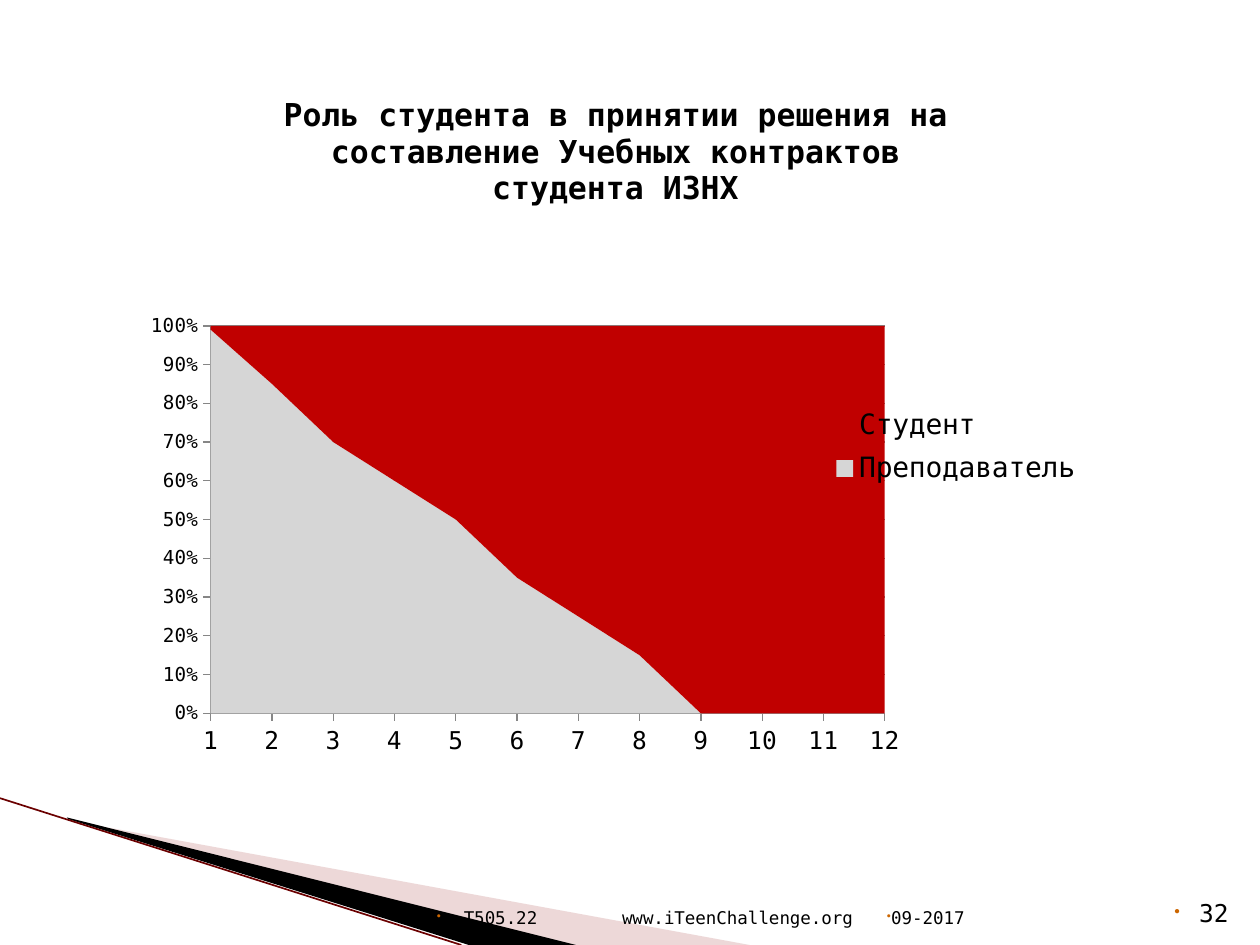
from lxml import etree
from pptx import Presentation
from pptx.chart.data import CategoryChartData
from pptx.dml.color import RGBColor
from pptx.enum.chart import XL_CHART_TYPE as ChartType, XL_LEGEND_POSITION as LegendPosition
from pptx.enum.chart import XL_TICK_MARK as TickMark
from pptx.enum.shapes import MSO_CONNECTOR as Connector
from pptx.enum.text import MSO_ANCHOR as Anchor, PP_ALIGN as Align
from pptx.oxml import parse_xml
from pptx.oxml.ns import nsdecls, qn
from pptx.util import Cm, Pt

FONT = "DejaVu Sans Mono"
BLACK = RGBColor(0x00, 0x00, 0x00)
PINK = RGBColor(0xD2, 0x9E, 0x9E)
DARK_RED = RGBColor(0x6B, 0x00, 0x00)
RED = RGBColor(0xC0, 0x00, 0x00)
SILVER = RGBColor(0xD6, 0xD6, 0xD6)
AXIS_GRAY = RGBColor(0x86, 0x86, 0x86)
ORANGE = RGBColor(0xCC, 0x66, 0x00)

# Content: lengths in centimetres
TITLE = ["Роль студента в принятии решения на составление Учебных контрактов",
         "студента ИЗНХ"]
MONTHS = [str(month) for month in range(1, 13)]
TEACHER = [99, 85, 70, 60, 50, 35, 25, 15, 0, 0, 0, 0]
SERIES = [("Преподаватель", TEACHER, SILVER),
          ("Студент", [100 - share for share in TEACHER], RED)]
CHART_AREA = (2.74, 1.27, 19.33, 15.32)
PLOT_LAYOUT = dict(x=0.078, y=0.346, w=0.703, h=0.51)
LEGEND_LAYOUT = dict(x=0.72, y=0.44, w=0.27, h=0.13)
TITLE_LAYOUT = dict(x=0.15, y=0.037)

WEDGES = [([(1.4, 16.54), (15.11, 19.05), (11.58, 19.05), (1.4, 16.51)], PINK, 40),
          ([(1.35, 16.48), (11.61, 19.05), (9.45, 19.05), (1.37, 16.51)], BLACK, 100)]
EDGE = (0, 16.09, 9.3, 19.05)

FOOTER_TOP, FOOTER_HEIGHT = 17.81, 1.02
FOOTERS = [
    ("09-2017", dict(left=17.63, width=5.33)),
    ("T505.22\twww.iTeenChallenge.org",
     dict(left=6.99, width=10.64, inset=1.82, hang=0.54, tab=3.73)),
    ("32", dict(left=23.06, width=1.96, size=14, hang=0.5, align=Align.RIGHT)),
]


def set_font(font, size, bold=False):
    font.name, font.size, font.bold = FONT, Pt(size), bold
    font.color.rgb = BLACK


def add_text(page, text, left, width, size=10, inset=0.25, hang=0, tab=None,
             align=Align.LEFT):
    box = page.shapes.add_textbox(Cm(left), Cm(FOOTER_TOP), Cm(width), Cm(FOOTER_HEIGHT))
    frame = box.text_frame
    frame.word_wrap = True
    frame.vertical_anchor = Anchor.BOTTOM
    frame.margin_left = Cm(inset)
    para = frame.paragraphs[0]
    para.alignment = align
    # Bullet, hanging indent and tab stop
    props = para._p.get_or_add_pPr()
    props.set("marL", str(Cm(hang)))
    props.set("indent", str(-Cm(hang)))
    color = etree.SubElement(props, qn("a:buClr"))
    etree.SubElement(color, qn("a:srgbClr"), val=str(ORANGE))
    etree.SubElement(props, qn("a:buSzPct"), val="68000")
    etree.SubElement(props, qn("a:buChar"), char="•")
    if tab:
        stops = etree.SubElement(props, qn("a:tabLst"))
        etree.SubElement(stops, qn("a:tab"), pos=str(Cm(tab)), algn="l")
    span = para.add_run()
    span.text = text
    set_font(span.font, size)


def add_wedge(page, points, color, opacity):
    start, *rest = [(Cm(x), Cm(y)) for x, y in points]
    builder = page.shapes.build_freeform(*start)
    builder.add_line_segments(rest, close=True)
    wedge = builder.convert_to_shape()
    wedge.shadow.inherit = False
    wedge.line.fill.background()
    wedge.fill.solid()
    wedge.fill.fore_color.rgb = color
    if opacity < 100:
        tone = wedge.fill._xPr.find(".//" + qn("a:srgbClr"))
        etree.SubElement(tone, qn("a:alpha"), val=str(opacity * 1000))


def manual_layout(target=None, **place):
    inner = f'<c:layoutTarget val="{target}"/>' if target else ""
    modes = "".join(f'<c:{key}Mode val="edge"/>' for key in "xy")
    values = "".join(f'<c:{key} val="{value}"/>' for key, value in place.items())
    return parse_xml(f'<c:layout {nsdecls("c")}><c:manualLayout>{inner}{modes}{values}'
                     '</c:manualLayout></c:layout>')


def place_part(part, after=None, **place):
    for old in part.findall(qn("c:layout")):
        part.remove(old)
    layout = manual_layout(**place)
    if after is None:
        part.insert(0, layout)
    else:
        part.find(qn(after)).addnext(layout)


def add_share_chart(page):
    data = CategoryChartData(number_format="General")
    data.categories = MONTHS
    for name, values, _ in SERIES:
        data.add_series(name, values)
    chart = page.shapes.add_chart(ChartType.AREA_STACKED_100,
                                  *map(Cm, CHART_AREA), data).chart
    set_font(chart.font, 10)
    for series, (_, _, color) in zip(chart.plots[0].series, SERIES):
        series.format.fill.solid()
        series.format.fill.fore_color.rgb = color

    # Title
    chart.has_title = True
    frame = chart.chart_title.text_frame
    for index, line in enumerate(TITLE):
        para = frame.add_paragraph() if index else frame.paragraphs[0]
        span = para.add_run()
        span.text = line
        set_font(span.font, 18, bold=True)
    chart.chart_title.include_in_layout = False
    place_part(chart.chart_title._element, after="c:tx", **TITLE_LAYOUT)

    # Axes
    for axis, size in ((chart.category_axis, 14), (chart.value_axis, 11)):
        set_font(axis.tick_labels.font, size)
        axis.major_tick_mark = TickMark.OUTSIDE
        axis.minor_tick_mark = TickMark.NONE
        axis.format.line.color.rgb = AXIS_GRAY
    shares = chart.value_axis
    shares.has_major_gridlines = True
    shares.major_gridlines.format.line.color.rgb = AXIS_GRAY
    shares.major_unit = 0.1
    shares.tick_labels.number_format = "0%"
    shares.tick_labels.number_format_is_linked = False
    shares._element.find(qn("c:crossBetween")).set("val", "midCat")

    # Legend and plot area
    chart.has_legend = True
    chart.legend.position = LegendPosition.RIGHT
    chart.legend.include_in_layout = False
    set_font(chart.legend.font, 16)
    place_part(chart.legend._element, after="c:legendPos", **LEGEND_LAYOUT)
    plot_area = chart._chartSpace.find(".//" + qn("c:plotArea"))
    place_part(plot_area, target="inner", **PLOT_LAYOUT)


def main():
    deck = Presentation()
    deck.slide_width, deck.slide_height = Cm(25.4), Cm(19.05)
    page = deck.slides.add_slide(deck.slide_layouts[6])

    # Corner decoration
    for points, color, opacity in WEDGES:
        add_wedge(page, points, color, opacity)
    edge = page.shapes.add_connector(Connector.STRAIGHT, *map(Cm, EDGE))
    edge.line.color.rgb = DARK_RED
    edge.line.width = Pt(0.95)
    etree.SubElement(edge._element.spPr, qn("a:effectLst"))

    for text, options in FOOTERS:
        add_text(page, text, **options)
    add_share_chart(page)
    deck.save("out.pptx")


if __name__ == "__main__":
    main()
